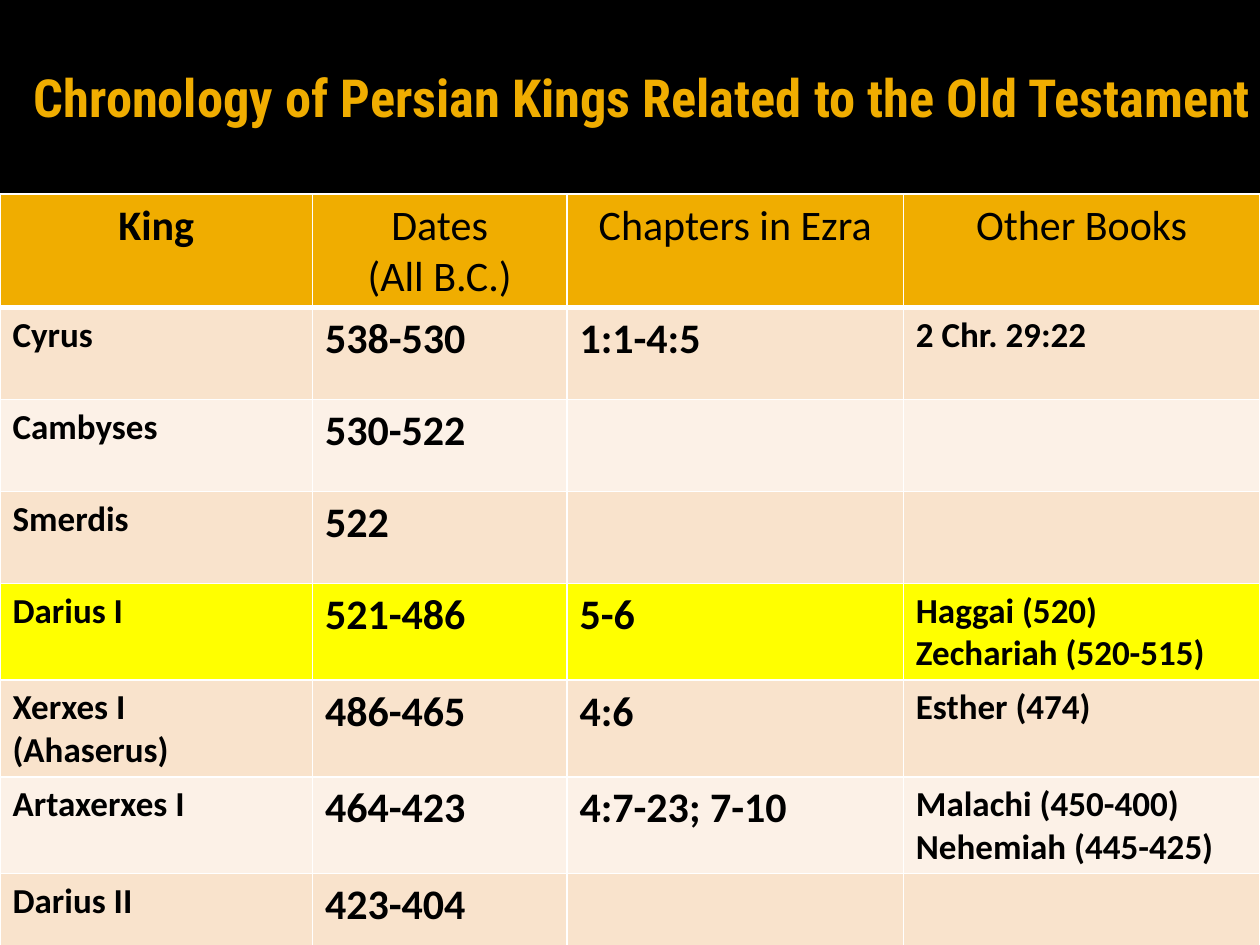
from lxml import etree
from pptx import Presentation
from pptx.dml.color import RGBColor
from pptx.enum.shapes import MSO_SHAPE
from pptx.enum.text import MSO_ANCHOR, PP_ALIGN
from pptx.oxml.ns import qn
from pptx.util import Inches, Pt

RECTANGLE = MSO_SHAPE.RECTANGLE
MIDDLE = MSO_ANCHOR.MIDDLE
CENTER, LEFT = PP_ALIGN.CENTER, PP_ALIGN.LEFT

GOLD, BLACK, WHITE, YELLOW = "F0AD00", "000000", "FFFFFF", "FFFF00"
BANDS = ["F9E3CC", "FCF1E7"]
COLUMN_WIDTHS = [2.48, 2.02, 2.67, 2.83]
HEADER_HEIGHT, ROW_HEIGHT = 0.9, 0.73
TABLE_TOP = 1.54
HIGHLIGHTED_KING = "Darius I"

# "\n" starts a paragraph, "\v" breaks a line
ROWS = [
    ["King", "Dates\n(All B.C.)", "Chapters in Ezra", "Other Books"],
    ["Cyrus", "538-530", "1:1-4:5", "2 Chr. 29:22"],
    ["Cambyses", "530-522", "", ""],
    ["Smerdis", "522", "", ""],
    ["Darius I", "521-486", "5-6", "Haggai (520)\nZechariah (520-515)"],
    ["Xerxes I\v(Ahaserus)", "486-465", "4:6", "Esther (474)"],
    ["Artaxerxes I", "464-423", "4:7-23; 7-10", "Malachi (450-400)\nNehemiah (445-425)"],
    ["Darius II", "423-404", "", ""],
]


def paint(color_format, color):
    color_format.rgb = RGBColor.from_string(color)


def add_borders(cell, bottom_width):
    """Draw white cell borders; they must come before the fill."""
    properties = cell._tc.get_or_add_tcPr()
    widths = {"a:lnL": 1, "a:lnR": 1, "a:lnT": 1, "a:lnB": bottom_width}
    for side, width in widths.items():
        line = etree.SubElement(properties, qn(side), w=str(Pt(width)))
        solid = etree.SubElement(line, qn("a:solidFill"))
        etree.SubElement(solid, qn("a:srgbClr"), val=WHITE)


presentation = Presentation()
presentation.slide_width = Inches(10)
presentation.slide_height = Inches(7.5)
slide = presentation.slides.add_slide(presentation.slide_layouts[6])

# Black title band
band = slide.shapes.add_shape(RECTANGLE, 0, 0, presentation.slide_width, Inches(1.57))
band.shadow.inherit = False
band.fill.solid()
paint(band.fill.fore_color, BLACK)
band.line.fill.background()

# Title
title = slide.shapes.add_textbox(Inches(0.17), 0, Inches(10), Inches(TABLE_TOP))
frame = title.text_frame
frame.word_wrap = True
frame.vertical_anchor = MIDDLE
frame.margin_right = Inches(0.05)
frame.text = "Chronology of Persian Kings Related to the Old Testament"
font = frame.paragraphs[0].font
font.name, font.size, font.bold = "Roboto Condensed", Pt(30), True
paint(font.color, GOLD)

# Table grid
table_height = HEADER_HEIGHT + ROW_HEIGHT * (len(ROWS) - 1)
table = slide.shapes.add_table(
    len(ROWS), len(COLUMN_WIDTHS), 0, Inches(TABLE_TOP),
    presentation.slide_width, Inches(table_height)).table
for column, width in zip(table.columns, COLUMN_WIDTHS):
    column.width = Inches(width)

# Table cells
for row_index, texts in enumerate(ROWS):
    is_header = row_index == 0
    table.rows[row_index].height = Inches(HEADER_HEIGHT if is_header else ROW_HEIGHT)
    if is_header:
        fill_color = GOLD
    elif texts[0] == HIGHLIGHTED_KING:
        fill_color = YELLOW
    else:
        fill_color = BANDS[(row_index - 1) % 2]

    for column_index, text in enumerate(texts):
        cell = table.cell(row_index, column_index)
        add_borders(cell, 3 if is_header else 1)
        cell.fill.solid()
        paint(cell.fill.fore_color, fill_color)
        cell.text = text
        for paragraph in cell.text_frame.paragraphs:
            paragraph.alignment = CENTER if is_header else LEFT
            font = paragraph.font
            font.name = "Calibri"
            font.size = Pt(24 if is_header or column_index in (1, 2) else 20)
            font.bold = not is_header or column_index == 0
            paint(font.color, BLACK)

presentation.save("out.pptx")
